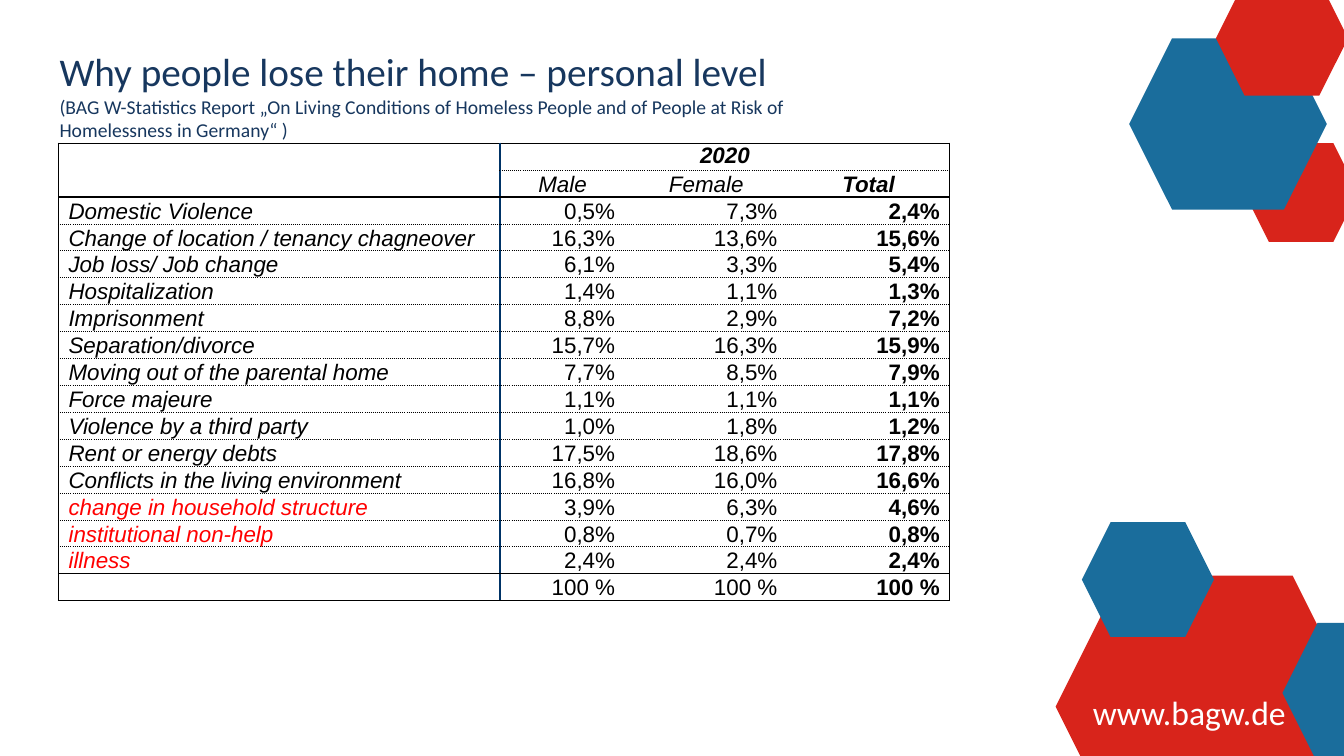
import lxml.etree
import pptx
import pptx.dml.color
import pptx.enum.shapes
import pptx.enum.text
import pptx.oxml.ns
import pptx.util

Inches, Pt = pptx.util.Inches, pptx.util.Pt
RGBColor = pptx.dml.color.RGBColor
ALIGN, ANCHOR = pptx.enum.text.PP_ALIGN, pptx.enum.text.MSO_ANCHOR
qn = pptx.oxml.ns.qn

RED = RGBColor(0xD8, 0x24, 0x1B)
BLUE = RGBColor(0x1A, 0x6D, 0x9C)
NAVY = RGBColor(0x17, 0x37, 0x5E)
RULE_BLUE = RGBColor(0x00, 0x33, 0x66)
HIGHLIGHT = RGBColor(0xFF, 0x00, 0x00)
BLACK = RGBColor(0x00, 0x00, 0x00)
WHITE = RGBColor(0xFF, 0xFF, 0xFF)

# Left, top, width, height, colour, from back to front
HEXAGONS = [
    (12.34, 1.42, 1.13, 0.98, RED),
    (10.47, 5.71, 3, 2.6, RED),
    (10.73, 5.18, 1.31, 1.14, BLUE),
    (12.72, 6.18, 1.6, 1.39, BLUE),
    (11.2, 0.38, 1.96, 1.7, BLUE),
    (12.06, -0.19, 1.31, 1.14, RED),
]

COL_WIDTHS = [4.38, 1.24, 1.61, 1.61]
ROWS = [
    ("", "2020", "", ""),
    ("", "Male", "Female", "Total"),
    ("Domestic Violence", "0,5%", "7,3%", "2,4%"),
    ("Change of location / tenancy chagneover", "16,3%", "13,6%", "15,6%"),
    ("Job loss/ Job change", "6,1%", "3,3%", "5,4%"),
    ("Hospitalization", "1,4%", "1,1%", "1,3%"),
    ("Imprisonment", "8,8%", "2,9%", "7,2%"),
    ("Separation/divorce", "15,7%", "16,3%", "15,9%"),
    ("Moving out of the parental home", "7,7%", "8,5%", "7,9%"),
    ("Force majeure", "1,1%", "1,1%", "1,1%"),
    ("Violence by a third party", "1,0%", "1,8%", "1,2%"),
    ("Rent or energy debts", "17,5%", "18,6%", "17,8%"),
    ("Conflicts in the living environment", "16,8%", "16,0%", "16,6%"),
    ("change in household structure", "3,9%", "6,3%", "4,6%"),
    ("institutional non-help", "0,8%", "0,7%", "0,8%"),
    ("illness", "2,4%", "2,4%", "2,4%"),
    ("", "100 %", "100 %", "100 %"),
]
HEADER_ROWS = 2
HIGHLIGHT_ROWS = (13, 14, 15)
SOLID_EDGES = (0, HEADER_ROWS, len(ROWS) - 1, len(ROWS))
COLUMN_RULES = {0: BLACK, 1: RULE_BLUE, len(COL_WIDTHS): BLACK}


def style_run(r, font, size, color, bold=False, italic=False):
    r.font.name, r.font.size = font, Pt(size)
    r.font.bold, r.font.italic = bold, italic
    r.font.color.rgb = color


def add_decoration(slide, site_box):
    # Hexagons in the corners
    for x, y, w, h, color in HEXAGONS:
        sp = slide.shapes.add_shape(pptx.enum.shapes.MSO_SHAPE.HEXAGON,
                                    Inches(x), Inches(y), Inches(w), Inches(h))
        sp.shadow.inherit = False
        sp.fill.solid()
        sp.fill.fore_color.rgb = color
        sp.line.fill.background()
    # Web address
    tf = slide.shapes.add_textbox(*map(Inches, site_box)).text_frame
    tf.word_wrap = True
    tf.text = "www.bagw.de"
    style_run(tf.paragraphs[0].runs[0], "Calibri", 24, WHITE)


def add_border(cell, side, color, dotted=False):
    tcPr = cell._tc.get_or_add_tcPr()
    ln = lxml.etree.SubElement(tcPr, qn(f"a:ln{side}"))
    if color is None:
        lxml.etree.SubElement(ln, qn("a:noFill"))
        return
    ln.set("w", str(Pt(0.5 if dotted else 1)))
    fill = lxml.etree.SubElement(ln, qn("a:solidFill"))
    lxml.etree.SubElement(fill, qn("a:srgbClr"), val=str(color))
    lxml.etree.SubElement(ln, qn("a:prstDash"), val="dot" if dotted else "solid")


def rule_cell(cell, row, col):
    right, bottom = col + cell.span_width, row + cell.span_height
    for side, edge in (("L", col), ("R", right)):
        add_border(cell, side, COLUMN_RULES.get(edge))
    for side, edge in (("T", row), ("B", bottom)):
        add_border(cell, side, BLACK, edge not in SOLID_EDGES)


def fill_cell(cell, text, row, col):
    header = row < HEADER_ROWS
    cell.margin_top = cell.margin_bottom = 0
    cell.margin_left = cell.margin_right = Inches(0.1)
    cell.vertical_anchor = ANCHOR.BOTTOM if row else ANCHOR.TOP
    cell.fill.solid()
    cell.fill.fore_color.rgb = WHITE
    p = cell.text_frame.paragraphs[0]
    if not text:
        # Keeps an empty cell as low as its row
        lxml.etree.SubElement(p._p, qn("a:endParaRPr"), sz="1600")
        return
    p.text = text
    p.alignment = ALIGN.CENTER if header else ALIGN.RIGHT if col else ALIGN.LEFT
    color = HIGHLIGHT if col == 0 and row in HIGHLIGHT_ROWS else BLACK
    style_run(p.runs[0], "Arial", 16, color,
              bold=row == 0 or col == 3, italic=header or col == 0)


def add_reasons_table(slide, box):
    x, y, w, h = map(Inches, box)
    table = slide.shapes.add_table(len(ROWS), len(COL_WIDTHS), x, y, w, h).table
    table.first_row = table.horz_banding = False
    for column, width in zip(table.columns, COL_WIDTHS):
        column.width = Inches(width)
    for row in table.rows:
        row.height = h // len(ROWS)
    # Heading cells that span rows or columns
    table.cell(0, 0).merge(table.cell(1, 0))
    table.cell(0, 1).merge(table.cell(0, 3))
    for i, texts in enumerate(ROWS):
        for j, text in enumerate(texts):
            cell = table.cell(i, j)
            if not cell.is_spanned:
                rule_cell(cell, i, j)
            fill_cell(cell, text, i, j)


def add_title(slide, box):
    sp = slide.shapes.title
    sp.left, sp.top, sp.width, sp.height = map(Inches, box)
    tf = sp.text_frame
    tf.text = ("Why people lose their home – personal level\n"
               "(BAG W-Statistics Report „On Living Conditions of Homeless People "
               "and of People at Risk of Homelessness in Germany“ )")
    tf.word_wrap = True
    tf.auto_size = pptx.enum.text.MSO_AUTO_SIZE.NONE
    tf.vertical_anchor = ANCHOR.TOP
    for p, size in zip(tf.paragraphs, (28, 14)):
        p.alignment = ALIGN.LEFT
        style_run(p.runs[0], "Calibri", size, NAVY)


def main():
    prs = pptx.Presentation()
    prs.slide_width, prs.slide_height = Inches(13.33), Inches(7.5)
    slide = prs.slides.add_slide(prs.slide_layouts[5])
    add_decoration(slide, (10.74, 6.82, 2.85, 0.5))
    add_reasons_table(slide, (0.58, 1.42, 8.84, 4.53))
    add_title(slide, (0.49, 0.42, 7.57, 0.61))
    prs.save("out.pptx")


if __name__ == "__main__":
    main()
